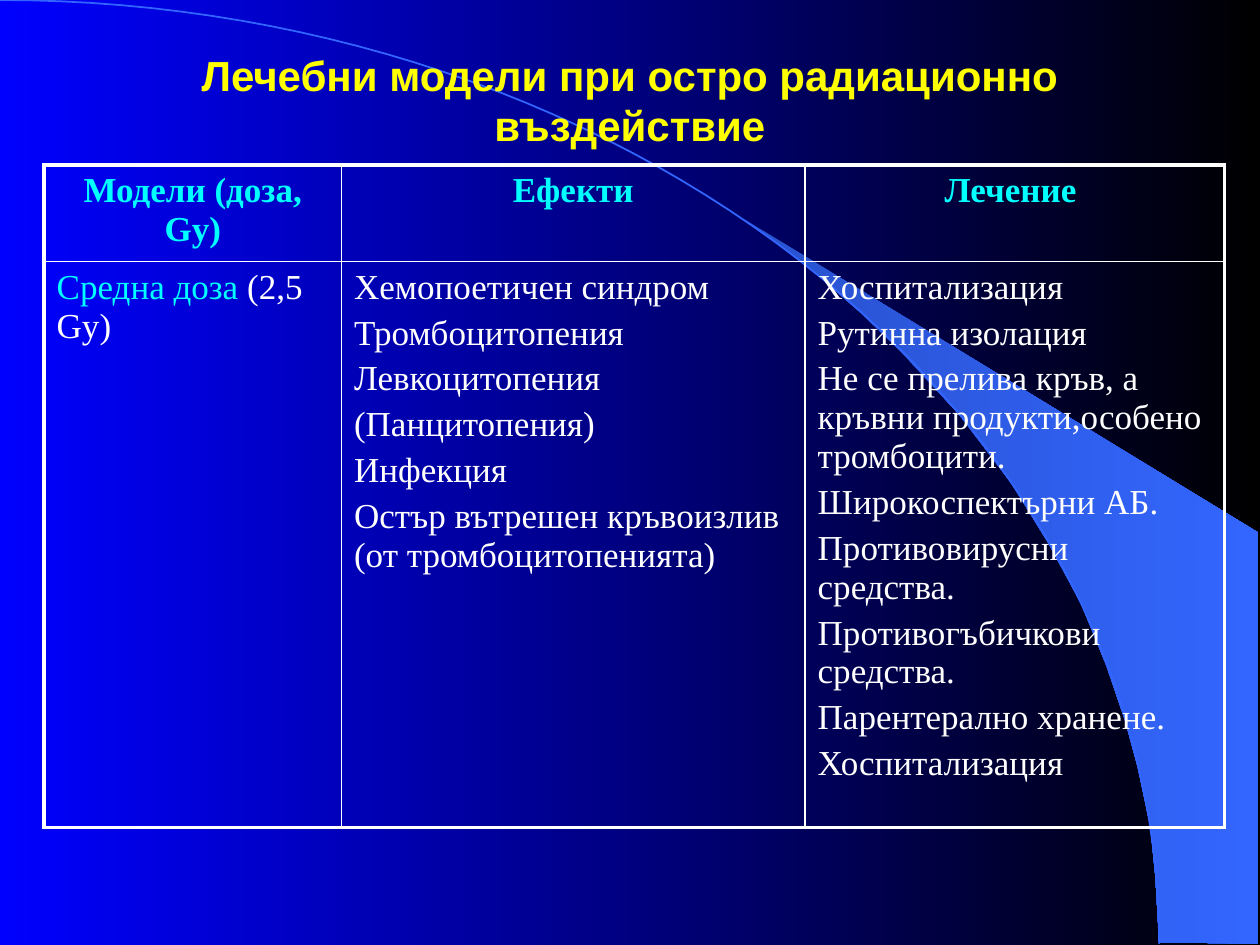
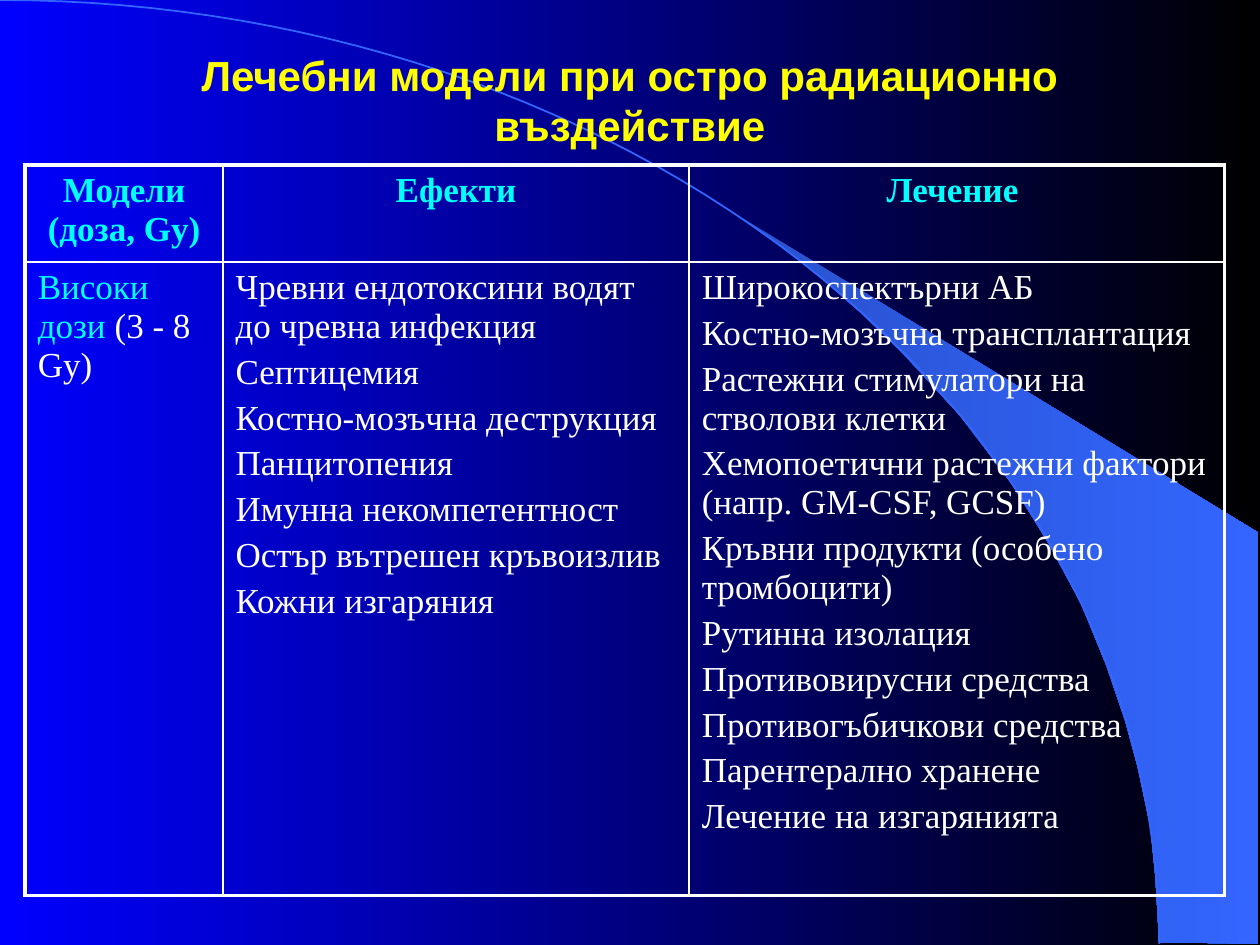
from math import cos, pi, sin

from lxml.etree import SubElement as Sub
from pptx import Presentation
from pptx.dml.color import RGBColor as Rgb
from pptx.enum.text import MSO_ANCHOR as Anchor, PP_ALIGN as Align
from pptx.oxml.ns import qn
from pptx.util import Inches, Pt

COLORS = {
    "blue": "0000FF", "black": "000000", "arc": "3366FF", "shade": "2851CC",
    "title": "FFFF00", "head": "00FFFF", "text": "FFFFFF",
}
SIZE = (10, 7.5)
TITLE = "Лечебни модели при остро радиационно въздействие"
HEADS = ("Модели (доза, Gy)", "Eфекти", "Лечение ")
BAND = [
    (9.2, 7.48), (9.99, 7.49), (9.99, 4.23), (5.89, 1.73), (6.24, 1.99),
    (6.53, 2.22), (6.85, 2.5), (7.16, 2.8), (7.62, 3.3), (8.03, 3.84),
    (8.32, 4.31), (8.58, 4.79), (8.78, 5.28), (8.93, 5.72), (9.03, 6.09),
    (9.13, 6.56), (9.17, 6.96),
]
MODELS = [
    {
        "box": (0.35, 1.31), "cols": (2.36, 3.68, 3.33), "rows": (0.76, 3.89),
        "dose": ("Средна доза ", "(2,5 Gy)"),
        "effects": [
            "Хемопоетичен синдром", "Тромбоцитопения", "Левкоцитопения",
            "(Панцитопения)", "Инфекция",
            "Остър вътрешен кръвоизлив (от тромбоцитопенията)",
        ],
        "cures": [
            "Хоспитализация", "Рутинна изолация",
            "Не се прелива кръв, а кръвни продукти,особено тромбоцити.",
            "Широкоспектърни АБ.", "Противовирусни средства.",
            "Противогъбичкови средства.", "Парентерално хранене.",
            "Хоспитализация",
        ],
    },
    {
        "box": (0.2, 1.31), "cols": (1.57, 3.7, 4.25), "rows": (0.77, 5.03),
        "dose": ("Високи дози ", "(3 - 8 Gy)"),
        "effects": [
            "Чревни ендотоксини водят до чревна инфекция", "Септицемия",
            "Костно-мозъчна деструкция", "Панцитопения",
            "Имунна некомпетентност", "Остър вътрешен кръвоизлив",
            "Кожни изгаряния",
        ],
        "cures": [
            "Широкоспектърни АБ", "Костно-мозъчна трансплантация",
            "Растежни стимулатори на стволови клетки",
            "Хемопоетични растежни фактори (напр. GM-CSF, GCSF)",
            "Кръвни продукти (особено тромбоцити)", "Рутинна изолация",
            "Противовирусни средства", "Противогъбичкови средства",
            "Парентерално хранене", "Лечение на изгарянията",
        ],
    },
]


def color(name):
    """Return the named colour."""
    return Rgb.from_string(COLORS[name])


def blend(fill, *names):
    """Fill from left to right between two colours."""
    fill.gradient()
    fill.gradient_angle = 0
    for stop, name, place in zip(fill.gradient_stops, names, (0, 1)):
        stop.color.rgb = color(name)
        stop.position = place


def style(run, name, size, font, bold=False):
    """Set the font of a run."""
    run.font.name, run.font.size, run.font.bold = font, Pt(size), bold
    run.font.color.rgb = color(name)


def outline(slide, points, close):
    """Draw a freeform through points given in inches."""
    first, *rest = [(Inches(x), Inches(y)) for x, y in points]
    pen = slide.shapes.build_freeform(*first)
    pen.add_line_segments(rest, close=close)
    shape = pen.convert_to_shape()
    shape.shadow.inherit = False
    return shape


def backdrop(slide, wide=9.2, high=7.49, steps=60):
    """Paint the gradient, the band and the quarter arc."""
    blend(slide.background.fill, "blue", "black")
    band = outline(slide, BAND, True)
    blend(band.fill, "shade", "arc")
    band.line.fill.background()
    turns = [pi / 2 * i / steps for i in range(steps + 1)]
    arc = outline(slide, [(wide * sin(t), high * (1 - cos(t))) for t in turns], False)
    arc.fill.background()
    arc.line.color.rgb = color("arc")
    arc.line.width = Pt(1)


def heading(slide, box):
    """Write the slide title inside the box."""
    frame = slide.shapes.add_textbox(*map(Inches, box)).text_frame
    frame.word_wrap = True
    frame.vertical_anchor = Anchor.MIDDLE
    frame.text = TITLE
    para = frame.paragraphs[0]
    para.alignment = Align.CENTER
    style(para.runs[0], "title", 24, "Arial", True)


def border(cell, outer):
    """Draw thick lines on the outer sides and thin ones elsewhere."""
    props = cell._tc.get_or_add_tcPr()
    for side in "LRTB":
        width = Pt(2.25 if side in outer else 1)
        line = Sub(props, qn(f"a:ln{side}"), w=str(width))
        fill = Sub(line, qn("a:solidFill"))
        Sub(fill, qn("a:srgbClr"), val=COLORS["text"])


def write(cell, lines, name="text", bold=False, align=Align.LEFT):
    """Write one paragraph for each line."""
    cell.text_frame.text = "\n".join(lines)
    for para in cell.text_frame.paragraphs:
        para.alignment = align
        para.space_before = Pt(4)
        for run in para.runs:
            style(run, name, 20, "Times New Roman", bold)


def grid(slide, box, cols, rows, dose, effects, cures):
    """Build the table of dose, effects and treatment."""
    size = (sum(cols), sum(rows))
    table = slide.shapes.add_table(2, 3, *map(Inches, (*box, *size))).table
    table.first_row = table.horz_banding = False
    for col, width in zip(table.columns, cols):
        col.width = Inches(width)
    for row, height, top in zip(table.rows, rows, "TB"):
        row.height = Inches(height)
        for cell, side in zip(row.cells, ("L", "", "R")):
            border(cell, top + side)
            cell.fill.background()
    for i, head in enumerate(HEADS):
        write(table.cell(0, i), [head], "head", True, Align.CENTER)
    level, amount = dose
    write(table.cell(1, 0), [level], "head")
    run = table.cell(1, 0).text_frame.paragraphs[0].add_run()
    run.text = amount
    style(run, "text", 20, "Times New Roman")
    write(table.cell(1, 1), effects)
    write(table.cell(1, 2), cures)


def main():
    """Build and save the slides."""
    deck = Presentation()
    deck.slide_width, deck.slide_height = map(Inches, SIZE)
    for model in MODELS:
        slide = deck.slides.add_slide(deck.slide_layouts[6])
        backdrop(slide)
        heading(slide, (0.75, 0.28, 8.5, 1.02))
        grid(slide, **model)
    deck.save("out.pptx")


if __name__ == "__main__":
    main()
